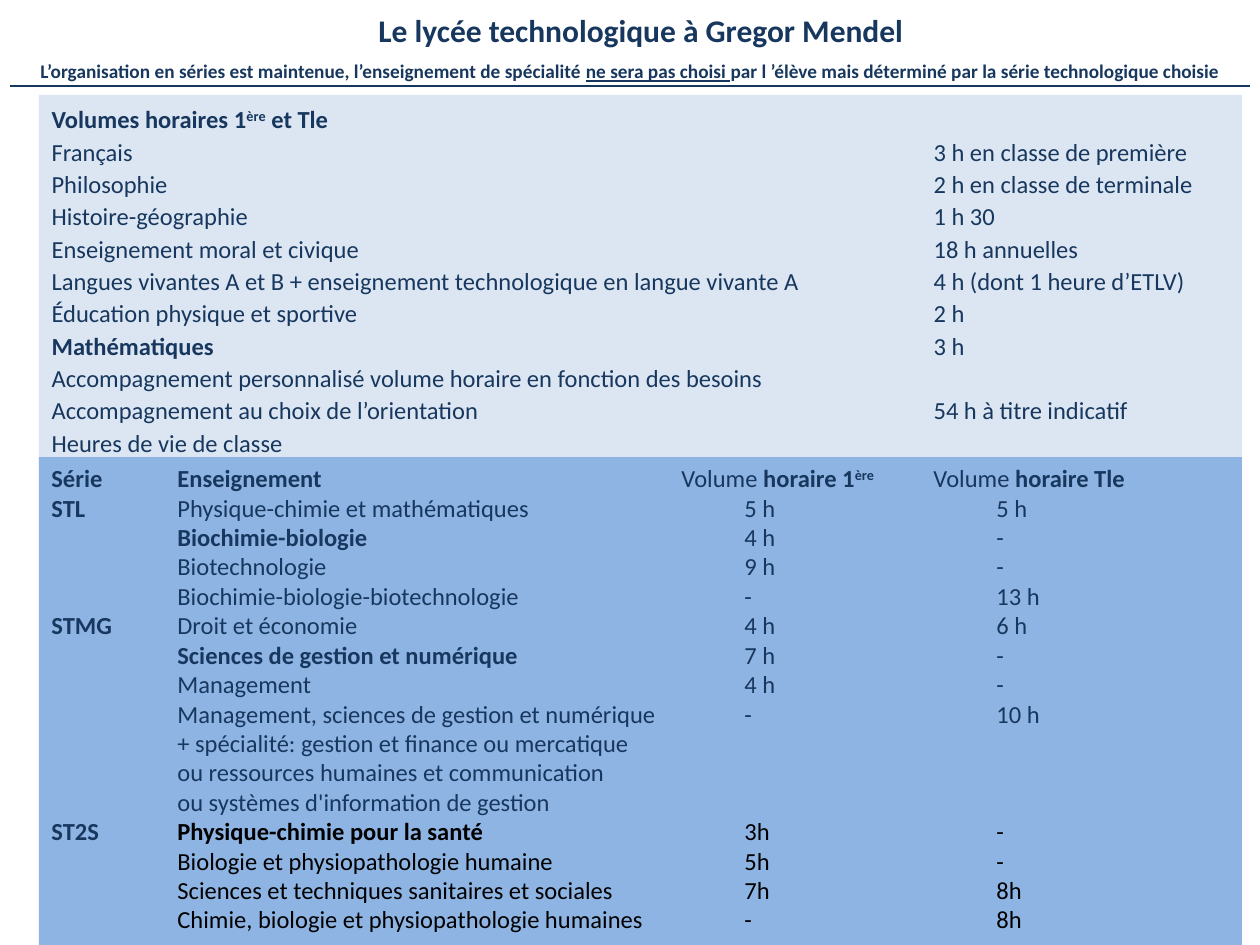
import pptx
import pptx.util
import pptx.dml.color
import pptx.enum.shapes
import pptx.enum.text
import pptx.oxml.ns
from lxml import etree

EMU_PER_PX = 914400 / 126
NAVY = pptx.dml.color.RGBColor(0x17, 0x37, 0x5E)
BLACK = pptx.dml.color.RGBColor(0, 0, 0)
PALE = pptx.dml.color.RGBColor(0xDC, 0xE6, 0xF2)
BLUE = pptx.dml.color.RGBColor(0x8E, 0xB4, 0xE3)

COMMON = [
    ("Français", 13, "3 h en classe de première"),
    ("Philosophie", 13, "2 h en classe de terminale"),
    ("Histoire-géographie", 11, "1 h 30"),
    ("Enseignement moral et civique", 10, "18 h annuelles"),
    ("Langues vivantes A et B + enseignement technologique en langue vivante A", 3,
     "4 h (dont 1 heure d’ETLV)"),
    ("Éducation physique et sportive", 10, "2 h"),
    ("Mathématiques", 12, "3 h"),
    ("Accompagnement personnalisé volume horaire en fonction des besoins", 0, ""),
    ("Accompagnement au choix de l’orientation", 8, "54 h à titre indicatif"),
    ("Heures de vie de classe", 0, ""),
]
SERIES = [
    ("STL", NAVY, [
        ("Physique-chimie et mathématiques", 4, "5 h", "5 h"),
        ("Biochimie-biologie", 6, "4 h", "-"),
        ("Biotechnologie", 7, "9 h", "-"),
        ("Biochimie-biologie-biotechnologie", 4, "-", "13 h")]),
    ("STMG", NAVY, [
        ("Droit et économie", 7, "4 h", "6 h"),
        ("Sciences de gestion et numérique", 4, "7 h", "-"),
        ("Management", 7, "4 h", "-"),
        ("Management, sciences de gestion et numérique", 2, "-", "10 h"),
        ("+ spécialité: gestion et finance ou mercatique", 0),
        ("ou ressources humaines et communication", 0),
        ("ou systèmes d'information de gestion", 0)]),
    ("ST2S", BLACK, [
        ("Physique-chimie pour la santé", 5, "3h", "-"),
        ("Biologie et physiopathologie humaine", 4, "5h", "-"),
        ("Sciences et techniques sanitaires et sociales", 3, "7h", "8h"),
        ("Chimie, biologie et physiopathologie humaines", 2, "-", "8h")]),
]
BOLD_SUBJECTS = {"Mathématiques", "Biochimie-biologie", "Sciences de gestion et numérique",
                 "Physique-chimie pour la santé"}
SERIES_TABS = "\t" * 2
YEAR_TABS = "\t" * 4


def px(n):
    """Turn pixels into EMU."""
    return pptx.util.Emu(round(n * EMU_PER_PX))


def place(sp, box):
    """Move a shape to a box given as left, top, width, height."""
    sp.left, sp.top, sp.width, sp.height = map(px, box)


def write(p, runs, size):
    """Add (text, flags[, color]) runs; b is bold, u underlined, s superscript."""
    for text, flags, *color in runs:
        r = p.add_run()
        r.text = text
        r.font.name = "Calibri"
        r.font.size = pptx.util.Pt(size)
        r.font.bold = "b" in flags
        r.font.color.rgb = color[0] if color else NAVY
        if "u" in flags:
            r.font.underline = True
        if "s" in flags:
            r._r.get_or_add_rPr().set("baseline", "30000")


def subject_flags(subject):
    """Tell whether a subject is set in bold."""
    return "b" if subject in BOLD_SUBJECTS else ""


def clear_bullet(p):
    """Drop the bullet and indent of a paragraph."""
    pPr = p._p.get_or_add_pPr()
    pPr.set("marL", "0")
    pPr.set("indent", "0")
    etree.SubElement(pPr, pptx.oxml.ns.qn("a:buNone"))


def fill_panel(sp, box, color, rows, spacing):
    """Fill a panel with one paragraph for each row of runs."""
    place(sp, box)
    sp.fill.solid()
    sp.fill.fore_color.rgb = color
    tf = sp.text_frame
    tf.word_wrap = True
    tf.auto_size = pptx.enum.text.MSO_AUTO_SIZE.NONE
    tf.vertical_anchor = pptx.enum.text.MSO_ANCHOR.TOP
    for i, runs in enumerate(rows):
        p = tf.add_paragraph() if i else tf.paragraphs[0]
        clear_bullet(p)
        p.alignment = pptx.enum.text.PP_ALIGN.LEFT
        p.line_spacing = spacing
        p.space_before = pptx.util.Pt(0)
        write(p, runs, 14)


def add_heading(s, box):
    """Write the title, the subtitle and the rule below them."""
    left, top, width, height = box
    sp = s.shapes.title
    place(sp, (left + 363, top + 5, 556, 50))
    tf = sp.text_frame
    tf.auto_size = pptx.enum.text.MSO_AUTO_SIZE.NONE
    tf.vertical_anchor = pptx.enum.text.MSO_ANCHOR.TOP
    tf.paragraphs[0].alignment = pptx.enum.text.PP_ALIGN.CENTER
    write(tf.paragraphs[0], [("Le lycée technologique à Gregor Mendel", "b")], 18)

    sp = s.shapes.add_textbox(*map(px, (left, top + 47, width, 48)))
    tf = sp.text_frame
    tf.word_wrap = True
    tf.vertical_anchor = pptx.enum.text.MSO_ANCHOR.MIDDLE
    tf.paragraphs[0].alignment = pptx.enum.text.PP_ALIGN.CENTER
    write(tf.paragraphs[0], [
        ("L’organisation en séries est maintenue, l’enseignement de spécialité ", "b"),
        ("ne sera pas choisi ", "bu"),
        ("par l ’élève mais déterminé par la série technologique choisie", "b")], 11)

    y = top + height
    line = s.shapes.add_connector(pptx.enum.shapes.MSO_CONNECTOR.STRAIGHT,
                                  px(left + 10), px(y), px(left + width - 10), px(y))
    line.line.color.rgb = NAVY
    line.line.width = pptx.util.Pt(1)
    etree.SubElement(line._element.spPr, pptx.oxml.ns.qn("a:effectLst"))


def add_common_panel(s, box):
    """List the hours shared by every series in the body placeholder."""
    rows = [[("Volumes horaires 1", "b"), ("ère", "bs"), (" et Tle", "b")]]
    for subject, tabs, hours in COMMON:
        runs = [(subject, subject_flags(subject))]
        if hours:
            runs.append(("\t" * tabs + hours, ""))
        rows.append(runs)
    fill_panel(s.placeholders[1], box, PALE, rows, 1.1)


def add_series_panel(s, box):
    """List the subjects and hours of each series."""
    rows = [[("Série" + SERIES_TABS + "Enseignement", "b"), ("\t" * 6 + "Volume", ""),
             (" horaire 1", "b"), ("ère", "bs"), ("\tVolume", ""), (" horaire Tle", "b")]]
    for series, color, subjects in SERIES:
        for i, (subject, tabs, *hours) in enumerate(subjects):
            runs = [(SERIES_TABS if i else series + SERIES_TABS, "b"),
                    (subject, subject_flags(subject), color)]
            if hours:
                runs.append(("\t" * tabs + YEAR_TABS.join(hours), "", color))
            rows.append(runs)
    sp = s.shapes.add_shape(pptx.enum.shapes.MSO_SHAPE.RECTANGLE, *map(px, box))
    sp.shadow.inherit = False
    sp.line.fill.background()
    fill_panel(sp, box, BLUE, rows, 1.0)


def main():
    """Build and save the slide."""
    prs = pptx.Presentation()
    prs.slide_width, prs.slide_height = px(1260), px(945)
    s = prs.slides.add_slide(prs.slide_layouts[1])
    add_common_panel(s, (39, 95, 1203, 362))
    add_series_panel(s, (39, 457, 1203, 488))
    add_heading(s, (0, 0, 1260, 86))
    prs.save("out.pptx")


if __name__ == "__main__":
    main()
